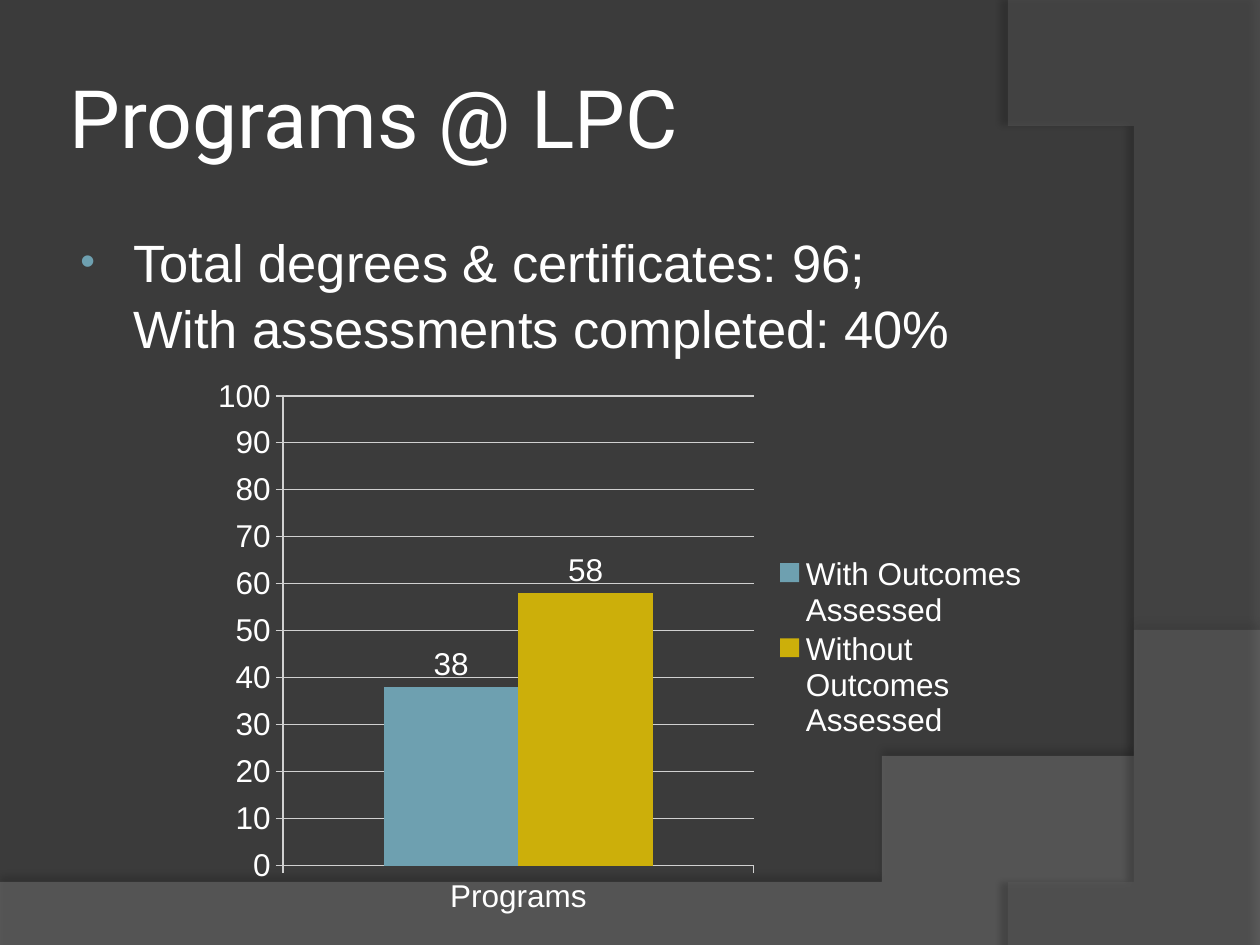
from lxml.etree import SubElement
from pptx import Presentation
from pptx.chart.data import CategoryChartData
from pptx.dml.color import RGBColor
from pptx.enum.chart import XL_CHART_TYPE, XL_LABEL_POSITION, XL_LEGEND_POSITION, XL_TICK_MARK
from pptx.enum.text import MSO_ANCHOR, MSO_AUTO_SIZE, PP_ALIGN
from pptx.oxml import parse_xml
from pptx.oxml.ns import nsdecls, qn
from pptx.util import Inches, Pt

THEME = {
    "back": RGBColor.from_string("3B3B3B"),
    "text": RGBColor.from_string("FFFFFF"),
    "line": RGBColor.from_string("D0D0D0"),
    "wave": RGBColor.from_string("7F7F7F"),
    "arc": RGBColor.from_string("5E5E5E"),
    "bars": [RGBColor.from_string("6EA0B0"), RGBColor.from_string("CCAF0A")],
    "title_font": "Roboto", "body_font": "Arial",
    "title_size": Pt(46), "body_size": Pt(30), "chart_size": Pt(18),
}
W, H = 10, 7.5


def bezier(p0, p1, p2, p3, steps=48):
    """Points along a cubic curve, start excluded."""
    points = []
    for i in range(1, steps + 1):
        t = i / steps
        u = 1 - t
        points.append(tuple(u**3 * a + 3 * u * u * t * b + 3 * u * t * t * c + t**3 * d
                            for a, b, c, d in zip(p0, p1, p2, p3)))
    return points


def place_layout(parent, x, y, w, h, inner=False):
    """Fix a chart part's position, as shares of the chart's size."""
    target = '<c:layoutTarget val="inner"/>' if inner else ""
    layout = parse_xml(
        f'<c:layout {nsdecls("c")}><c:manualLayout>{target}'
        '<c:xMode val="edge"/><c:yMode val="edge"/>'
        f'<c:x val="{x}"/><c:y val="{y}"/><c:w val="{w}"/><c:h val="{h}"/>'
        '</c:manualLayout></c:layout>')
    for old in parent.findall(qn("c:layout")):
        parent.remove(old)
    parent.insert(0 if inner else 1, layout)


prs = Presentation()
prs.slide_width, prs.slide_height = Inches(W), Inches(H)
s = prs.slides.add_slide(prs.slide_layouts[5])
s.background.fill.solid()
s.background.fill.fore_color.rgb = THEME["back"]

# Background sweeps: outline, colour, opacity, shadow opacity, distance, direction
wave = [(0, 7.05), (0, H), (W, H), (W, 5.2)]
wave += bezier((W, 5.2), (5.59, 7.29), (3.91, 7.19), (0, 7.05))
arc = [(W, 0.02), (W, H), (8.21, H)]
arc += bezier((8.21, H), (9.35, 6.19), (10.18, 3), (8, 0))
for points, color, alpha, shade, dist, angle in [
        (wave, THEME["wave"], 45, 35, 3.5, 270), (arc, THEME["arc"], 40, 45, 4, 180)]:
    fb = s.shapes.build_freeform(*points[0], scale=Inches(1))
    fb.add_line_segments(points[1:], close=True)
    sp = fb.convert_to_shape()
    sp.fill.solid()
    sp.fill.fore_color.rgb = color
    sp.line.fill.background()
    clr = sp.fill._xPr.find(qn("a:solidFill"))[0]
    SubElement(clr, qn("a:alpha"), val=str(alpha * 1000))
    sp.shadow.inherit = False
    effects = sp.element.spPr.find(qn("a:effectLst"))
    effects.append(parse_xml(
        f'<a:outerShdw {nsdecls("a")} blurRad="{Pt(4)}" dist="{Pt(dist)}" '
        f'dir="{angle * 60000}" algn="ctr" rotWithShape="0"><a:srgbClr val="000000">'
        f'<a:alpha val="{shade * 1000}"/></a:srgbClr></a:outerShdw>'))

# Title
title = s.shapes.title
title.left, title.top = Inches(0.05 * W), Inches(0.04 * H)
title.width, title.height = Inches(8.17), Inches(1.25)
tf = title.text_frame
tf.text = "Programs @ LPC"
tf.auto_size = MSO_AUTO_SIZE.NONE
tf.vertical_anchor = MSO_ANCHOR.MIDDLE
tf.margin_left = tf.margin_right = tf.margin_top = tf.margin_bottom = Inches(0.05)
p = tf.paragraphs[0]
p.alignment = PP_ALIGN.LEFT
p.font.name, p.font.size = THEME["title_font"], THEME["title_size"]
p.font.color.rgb = THEME["text"]

# Bulleted totals
tf = s.shapes.add_textbox(Inches(0.05 * W), Inches(1.75), Inches(8.83), Inches(1.25)).text_frame
tf.word_wrap = True
p = tf.paragraphs[0]
p.text = "Total degrees & certificates: 96;\vWith assessments completed: 40%"
p.space_before, p.line_spacing = Pt(4), 1.05
p.font.name, p.font.size = THEME["body_font"], THEME["body_size"]
p.font.color.rgb = THEME["text"]
pPr = p._p.get_or_add_pPr()
pPr.set("marL", str(Inches(0.46)))
pPr.set("indent", str(Inches(-0.42)))
bullet = [f'<a:buClr {nsdecls("a")}><a:srgbClr val="{THEME["bars"][0]}"/></a:buClr>',
          f'<a:buSzPct {nsdecls("a")} val="80000"/>',
          f'<a:buFont {nsdecls("a")} typeface="Arial"/>',
          f'<a:buChar {nsdecls("a")} char="•"/>']
at = list(pPr).index(pPr.find(qn("a:defRPr")))
for i, xml in enumerate(bullet):
    pPr.insert(at + i, parse_xml(xml))

# Chart
data = CategoryChartData()
data.categories = ["Programs"]
data.add_series("With Outcomes Assessed", [38])
data.add_series("Without Outcomes Assessed", [58])
chart = s.shapes.add_chart(XL_CHART_TYPE.COLUMN_CLUSTERED, Inches(1.58), Inches(2.92),
                           Inches(6.67), Inches(4.44), data).chart
chart.has_title = False
chart.font.name, chart.font.size = THEME["body_font"], THEME["chart_size"]
chart.font.color.rgb = THEME["text"]

plot = chart.plots[0]
plot.gap_width, plot.overlap, plot.vary_by_categories = 150, 0, False
for series, color in zip(plot.series, THEME["bars"]):
    series.format.fill.solid()
    series.format.fill.fore_color.rgb = color
    labels = series.data_labels
    labels.show_value = True
    labels.position = XL_LABEL_POSITION.OUTSIDE_END

axis = chart.value_axis
axis.minimum_scale, axis.maximum_scale, axis.major_unit = 0, 100, 10
axis.has_major_gridlines = True
for ax in (axis, chart.category_axis):
    ax.major_tick_mark = XL_TICK_MARK.OUTSIDE
for fmt in (axis.format, chart.category_axis.format, axis.major_gridlines.format):
    fmt.line.color.rgb = THEME["line"]
    fmt.line.width = Pt(0.75)

chart.has_legend = True
chart.legend.position = XL_LEGEND_POSITION.RIGHT
chart.legend.include_in_layout = False
place_layout(chart.legend._element, 0.68, 0.33, 0.31, 0.34)
place_layout(chart._chartSpace.chart.plotArea, 0.1, 0.05, 0.56, 0.84, inner=True)

prs.save("out.pptx")
